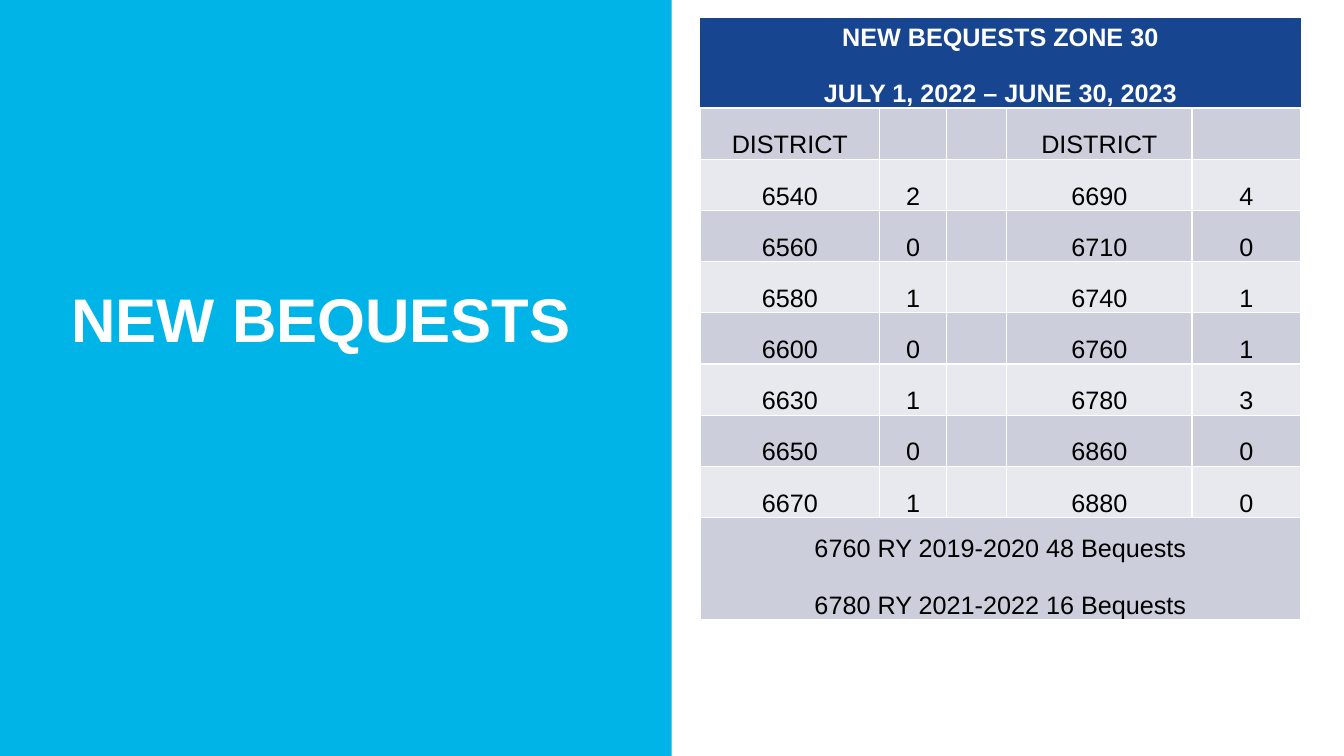
from lxml import etree
from pptx import Presentation
from pptx.dml.color import RGBColor
from pptx.enum import shapes, text
from pptx.oxml import ns
from pptx.util import Cm, Pt

# Content
TITLE = "NEW BEQUESTS"
HEADING = ["NEW BEQUESTS ZONE 30", "JULY 1, 2022 – JUNE 30, 2023"]
DISTRICTS = [
    ("DISTRICT", "", "", "DISTRICT", ""),
    ("6540", "2", "", "6690", "4"),
    ("6560", "0", "", "6710", "0"),
    ("6580", "1", "", "6740", "1"),
    ("6600", "0", "", "6760", "1"),
    ("6630", "1", "", "6780", "3"),
    ("6650", "0", "", "6860", "0"),
    ("6670", "1", "", "6880", "0"),
]
TOTALS = ["6760 RY 2019-2020 48 Bequests", "6780 RY 2021-2022 16 Bequests"]

# Layout and colours
COLS = [4.53, 1.68, 1.52, 4.67, 2.74]
ROWS = [2.24] + [1.29] * len(DISTRICTS) + [2.57]
SKY = RGBColor(0x01, 0xB4, 0xE7)
NAVY = RGBColor(0x17, 0x45, 0x8F)
BANDS = [RGBColor(0xE8, 0xE9, 0xEE), RGBColor(0xCC, 0xCF, 0xDB)]
WHITE = RGBColor(0xFF, 0xFF, 0xFF)
BLACK = RGBColor(0, 0, 0)
ANCHOR = text.MSO_ANCHOR.BOTTOM
CELL_FORMAT = {
    "vertical_anchor": ANCHOR, "margin_left": Cm(0.03), "margin_right": Cm(0.03),
    "margin_top": Cm(0.03), "margin_bottom": 0,
}


def set_attrs(obj, values):
    for name, value in values.items():
        setattr(obj, name, value)


def write(tf, lines, size, color, bold, **paragraph_format):
    for i, line in enumerate(lines):
        p = tf.paragraphs[0] if i == 0 else tf.add_paragraph()
        set_attrs(p, paragraph_format)
        p.space_before = Pt(20 if i else 0)
        set_attrs(p.font, {"name": "Arial", "size": Pt(size), "bold": bold})
        p.font.color.rgb = color
        if line:
            r = p.add_run()
            r.text = line
            set_attrs(r.font, {"name": "Arial", "size": Pt(size), "bold": bold})
            r.font.color.rgb = color


def set_borders(cell, color):
    tcPr = cell._tc.get_or_add_tcPr()
    for side in "LRTB":
        ln = etree.SubElement(tcPr, ns.qn(f"a:ln{side}"), w=str(Pt(1)))
        if color is None:
            etree.SubElement(ln, ns.qn("a:noFill"))
        else:
            fill = etree.SubElement(ln, ns.qn("a:solidFill"))
            etree.SubElement(fill, ns.qn("a:srgbClr"), val=str(color))


prs = Presentation()
prs.slide_width, prs.slide_height = Cm(33.87), Cm(19.05)
s = prs.slides.add_slide(prs.slide_layouts[6])

# Left panel
panel = s.shapes.add_shape(shapes.MSO_SHAPE.RECTANGLE, 0, 0, Cm(16.93), Cm(19.05))
panel.shadow.inherit = False
panel.fill.solid()
panel.fill.fore_color.rgb = SKY
panel.line.fill.background()

# Title
tf = s.shapes.add_textbox(Cm(1.55), Cm(5.94), Cm(13.82), Cm(3.15)).text_frame
set_attrs(tf, {"word_wrap": True, "vertical_anchor": ANCHOR})
write(tf, [TITLE], 44, WHITE, True, line_spacing=0.9)

# Bequests table
table = s.shapes.add_table(len(ROWS), len(COLS), Cm(17.64), Cm(0.46),
                           Cm(sum(COLS)), Cm(sum(ROWS))).table
set_attrs(table, {"first_row": False, "horz_banding": False})
for column, width in zip(table.columns, COLS):
    column.width = Cm(width)

blanks = [[""]] * (len(COLS) - 1)
content = [[HEADING] + blanks,
           *([[value] for value in row] for row in DISTRICTS),
           [TOTALS] + blanks]
for i, (row, height) in enumerate(zip(content, ROWS)):
    table.rows[i].height = Cm(height)
    heading = i == 0
    for j, lines in enumerate(row):
        cell = table.cell(i, j)
        set_attrs(cell, CELL_FORMAT)
        set_borders(cell, None if heading else WHITE)
        cell.fill.solid()
        cell.fill.fore_color.rgb = NAVY if heading else BANDS[i % 2]
        write(cell.text_frame, lines, 18, WHITE if heading else BLACK, heading,
              alignment=text.PP_ALIGN.CENTER)

# Full-width first and last rows
for i in (0, len(ROWS) - 1):
    table.cell(i, 0).merge(table.cell(i, len(COLS) - 1))

prs.save("out.pptx")
